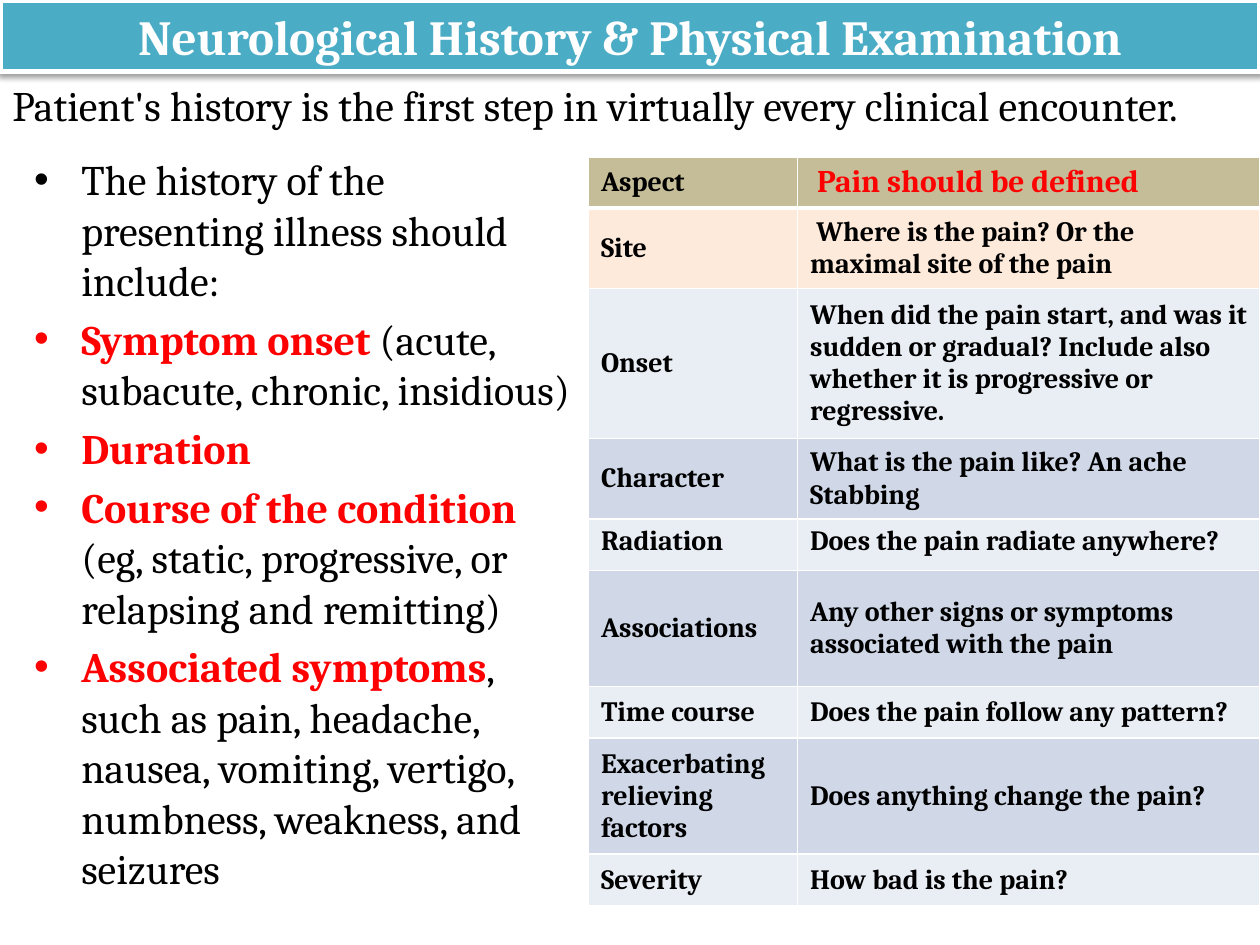
from lxml import etree
from pptx import Presentation
from pptx.dml.color import RGBColor
from pptx.enum.text import MSO_ANCHOR, MSO_AUTO_SIZE, PP_ALIGN
from pptx.oxml import parse_xml
from pptx.oxml.ns import nsdecls, qn
from pptx.util import Inches, Pt

CENTER = PP_ALIGN.CENTER
TOP, MIDDLE = MSO_ANCHOR.TOP, MSO_ANCHOR.MIDDLE
NO_FIT = MSO_AUTO_SIZE.NONE
FONT = "Cambria"
BLACK, WHITE, RED, TEAL = "000000", "FFFFFF", "FF0000", "4BACC6"
TAN, PEACH, PALE, BLUE = "C4BD97", "FDEADA", "E9EDF4", "D0D8E8"

HISTORY = [
    ("", "The history of the presenting illness should include:"),
    ("Symptom onset ", "(acute, subacute, chronic, insidious)"),
    ("Duration", ""),
    ("Course of the condition ",
     "(eg, static, progressive, or relapsing and remitting)"),
    ("Associated symptoms",
     ", such as pain, headache, nausea, vomiting, vertigo, numbness, "
     "weakness, and seizures"),
]

# Aspect, question, row height
PAIN_ROWS = [
    ("Aspect", " Pain should be defined", 0.4),
    ("Site", " Where is the pain? Or the maximal site of the pain", 0.64),
    ("Onset", "When did the pain start, and was it sudden or gradual? Include "
     "also whether it is progressive or regressive.", 1.19),
    ("Character", "What is the pain like? An ache Stabbing", 0.64),
    ("Radiation", "Does the pain radiate anywhere?", 0.41),
    ("Associations",
     "Any other signs or symptoms  associated with the pain", 0.92),
    ("Time course", "Does the pain follow any pattern?", 0.41),
    ("Exacerbating relieving factors", "Does anything change the pain?", 0.92),
    ("Severity", "How bad is the pain?", 0.41),
]


def color(value):
    return RGBColor.from_string(value)


class SlideBuilder:
    def __init__(self, page):
        self.page = page

    def style(self, font, size, ink=BLACK, bold=False):
        font.name, font.size, font.bold = FONT, Pt(size), bold
        font.color.rgb = color(ink)

    def place(self, shape, left, top, width, height):
        shape.left, shape.top = Inches(left), Inches(top)
        shape.width, shape.height = Inches(width), Inches(height)

    def title(self, text, *area):
        banner = self.page.shapes.title
        self.place(banner, *area)
        banner.fill.solid()
        banner.fill.fore_color.rgb = color(TEAL)
        banner.line.color.rgb = color(WHITE)
        banner.line.width = Pt(3)
        banner._element.spPr.append(parse_xml(
            f'<a:effectLst {nsdecls("a")}><a:outerShdw blurRad="40000" '
            f'dist="20000" dir="5400000" rotWithShape="0">'
            f'<a:srgbClr val="{BLACK}"><a:alpha val="38000"/></a:srgbClr>'
            f'</a:outerShdw></a:effectLst>'))
        frame = banner.text_frame
        frame.text = text
        frame.auto_size, frame.vertical_anchor = NO_FIT, MIDDLE
        para = frame.paragraphs[0]
        para.alignment = CENTER
        self.style(para.font, 28, WHITE, True)

    def bullets(self, items, *area):
        body = self.page.placeholders[1]
        self.place(body, *area)
        frame = body.text_frame
        frame.auto_size = NO_FIT
        for index, (lead, rest) in enumerate(items):
            para = frame.add_paragraph() if index else frame.paragraphs[0]
            if index == 0:
                para.space_before = Pt(0)
            for text, ink, bold in ((lead, RED, True), (rest, BLACK, False)):
                if text:
                    span = para.add_run()
                    span.text = text
                    self.style(span.font, 24, ink, bold)

    def text(self, text, size, *area):
        box = self.page.shapes.add_textbox(*map(Inches, area))
        box.text_frame.word_wrap = True
        para = box.text_frame.paragraphs[0]
        para.text = text
        self.style(para.font, size)

    def borders(self, cell, bottom):
        properties = cell._tc.get_or_add_tcPr()
        widths = {"lnL": 1, "lnR": 1, "lnT": 1, "lnB": bottom}
        for index, (side, width) in enumerate(widths.items()):
            line = etree.Element(qn(f"a:{side}"), w=str(Pt(width)))
            fill = etree.SubElement(line, qn("a:solidFill"))
            etree.SubElement(fill, qn("a:srgbClr"), val=WHITE)
            properties.insert(index, line)

    def table(self, rows, widths, left, top):
        height = sum(row[-1] for row in rows)
        table = self.page.shapes.add_table(
            len(rows), len(widths), Inches(left), Inches(top),
            Inches(sum(widths)), Inches(height)).table
        for column, width in zip(table.columns, widths):
            column.width = Inches(width)
        for index, (*texts, row_height) in enumerate(rows):
            table.rows[index].height = Inches(row_height)
            banding = BLUE if index % 2 else PALE
            fill = {0: TAN, 1: PEACH}.get(index, banding)
            for position, text in enumerate(texts):
                cell = table.cell(index, position)
                cell.text = text
                cell.vertical_anchor = TOP if texts[0] == "Radiation" else MIDDLE
                cell.fill.solid()
                cell.fill.fore_color.rgb = color(fill)
                self.borders(cell, 1 if index else 3)
                heading = index == 0 and position == 1
                self.style(cell.text_frame.paragraphs[0].font,
                           18 if heading else 16,
                           RED if heading else BLACK, True)


def main():
    deck = Presentation()
    deck.slide_width, deck.slide_height = Inches(10), Inches(7.5)
    builder = SlideBuilder(deck.slides.add_slide(deck.slide_layouts[1]))

    # Banner and opening statement
    builder.title("Neurological History & Physical Examination", 0, 0, 10, 0.57)
    builder.text("Patient's history is the first step in virtually every "
                 "clinical encounter.", 24, 0, 0.58, 10, 0.5)

    # History list beside the pain table
    builder.bullets(HISTORY, 0.17, 1.17, 4.5, 6.42)
    builder.table(PAIN_ROWS, (1.66, 3.67), 4.67, 1.25)

    deck.save("out.pptx")


if __name__ == "__main__":
    main()
